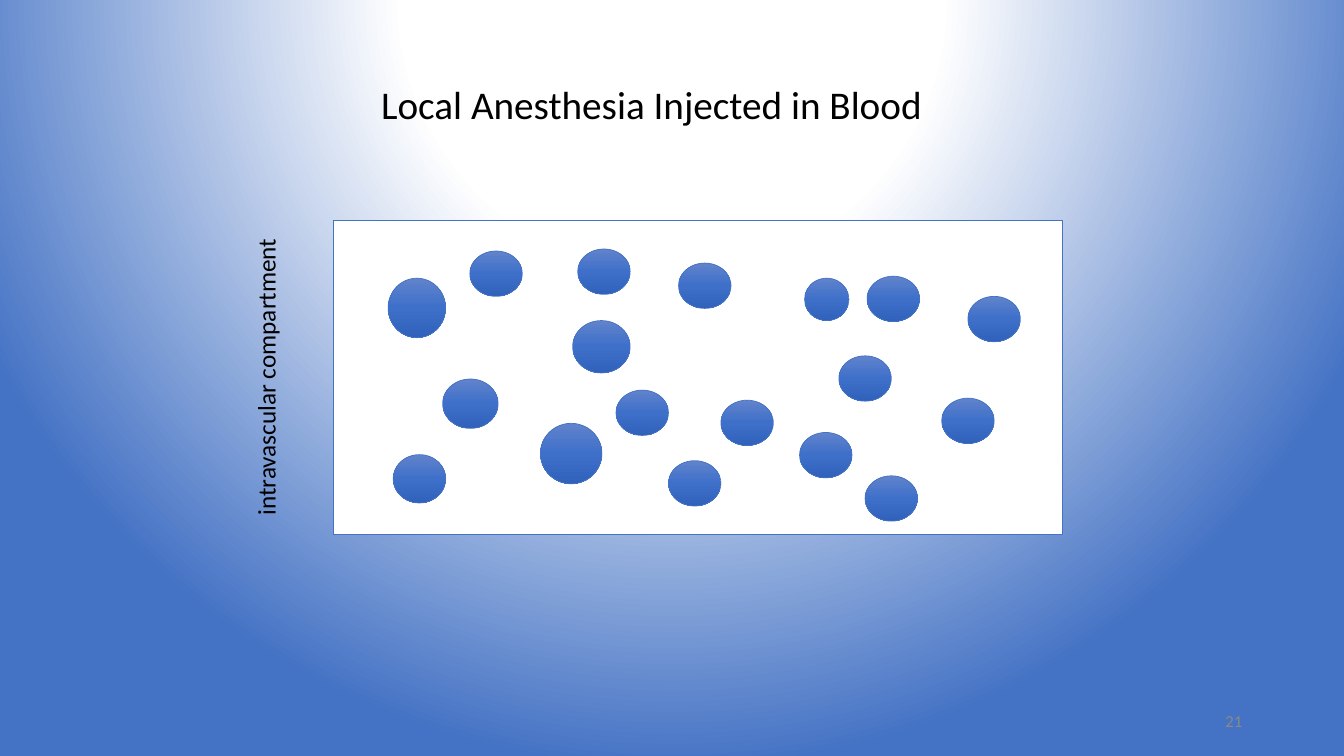
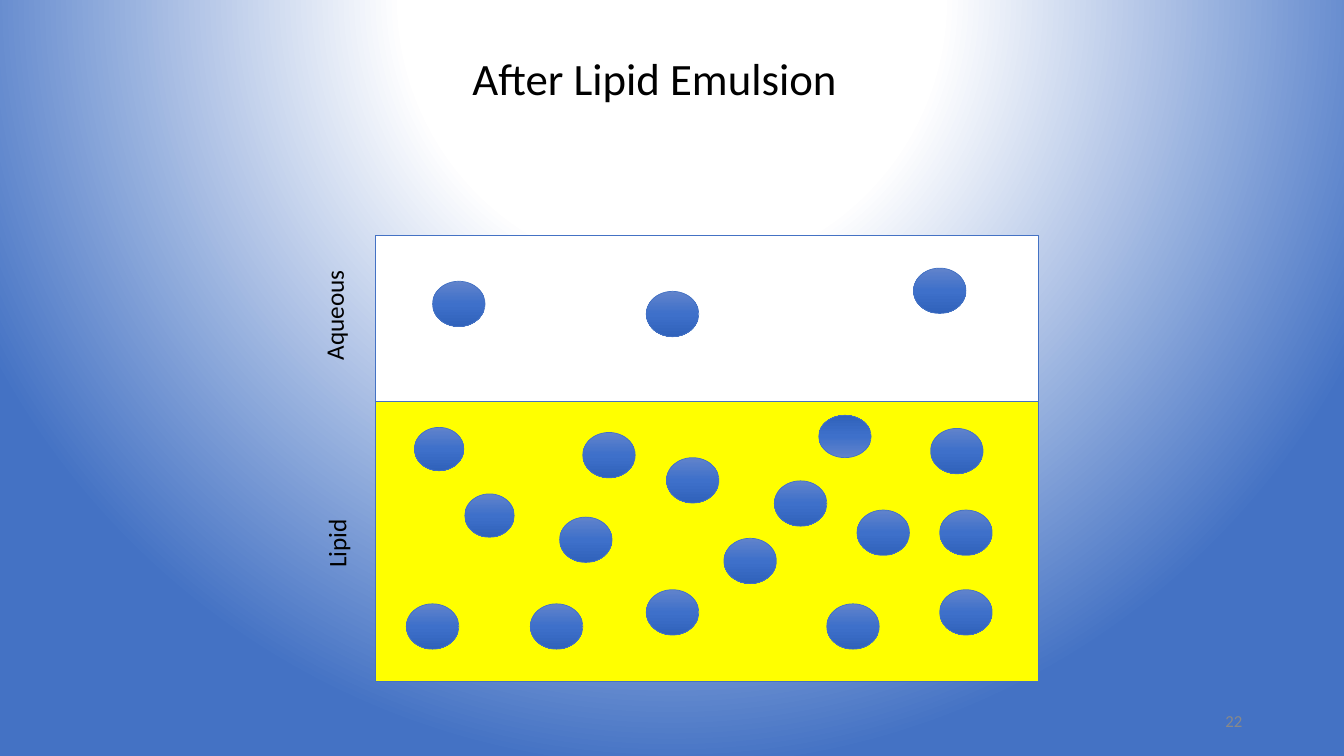
from dataclasses import dataclass

from pptx import Presentation
from pptx.dml.color import RGBColor
from pptx.enum.shapes import MSO_SHAPE
from pptx.enum.text import MSO_ANCHOR, PP_ALIGN
from pptx.oxml import parse_xml
from pptx.oxml.ns import nsdecls
from pptx.util import Inches, Pt


@dataclass(frozen=True)
class Theme:
    font: str = "Calibri"
    black: str = "000000"
    white: str = "FFFFFF"
    blue: str = "4472C4"
    yellow: str = "FFFF00"
    gray: str = "898989"
    glow: tuple = ((0, "FFFFFF"), (35, "FFFFFF"), (100, "4472C4"))
    bead: tuple = ((0, "6183CB"), (50, "3E70CA"), (100, "3062BB"))
    label: int = 18
    number: int = 12
    line: float = 0.5


THEME = Theme()
RADIAL = ('<a:path path="circle"><a:fillToRect l="50000" t="-80000" '
          'r="50000" b="180000"/></a:path>')
LINEAR = '<a:lin ang="5400000" scaled="0"/>'

BLOOD = [
    (3.85, 2.76, 0.57, 0.59), (5.36, 4.2, 0.61, 0.6), (7.98, 2.76, 0.44, 0.42),
    (5.68, 3.18, 0.57, 0.52), (4.39, 3.76, 0.55, 0.49), (3.9, 4.51, 0.52, 0.48),
    (4.66, 2.49), (7.93, 4.29), (6.63, 4.57), (6.11, 3.87), (8.58, 4.72),
    (7.15, 3.97), (6.73, 2.61), (9.34, 3.95), (8.6, 2.74), (9.6, 2.94),
    (8.32, 3.53), (5.73, 2.47),
]
WATER = [(4.29, 2.79), (6.41, 2.89), (9.06, 2.66)]
LIPID = [
    (4.11, 4.24, 0.49, 0.43), (4.61, 4.9, 0.49, 0.43), (8.5, 5.06),
    (5.55, 5.13), (6.61, 4.54), (4.03, 5.99), (9.32, 5.06), (7.68, 4.77),
    (5.26, 5.99), (8.12, 4.12, 0.52, 0.42, True), (7.18, 5.34), (9.23, 4.25),
    (9.32, 5.85), (5.78, 4.29), (6.41, 5.85), (8.2, 5.99),
]


def blend(fill, owner, stops, shade):
    fill.gradient()
    old = owner.xpath(".//a:gradFill")[0]
    marks = "".join(
        f'<a:gs pos="{pos * 1000}"><a:srgbClr val="{color}"/></a:gs>'
        for pos, color in stops)
    new = parse_xml(f'<a:gradFill {nsdecls("a")} rotWithShape="1">'
                    f'<a:gsLst>{marks}</a:gsLst>{shade}</a:gradFill>')
    old.getparent().replace(old, new)


def add_shape(slide, kind, *place):
    shape = slide.shapes.add_shape(kind, *map(Inches, place))
    shape.shadow.inherit = False
    shape.line.color.rgb = RGBColor.from_string(THEME.blue)
    shape.line.width = Pt(THEME.line)
    return shape


def add_panel(slide, color, *place):
    panel = add_shape(slide, MSO_SHAPE.RECTANGLE, *place)
    panel.fill.solid()
    panel.fill.fore_color.rgb = RGBColor.from_string(color)


def add_bead(slide, left, top, width=0.52, height=0.45, flip=False):
    bead = add_shape(slide, MSO_SHAPE.OVAL, left, top, width, height)
    blend(bead.fill, bead.element.spPr, THEME.bead, LINEAR)
    if flip:
        bead.element.spPr.xfrm.set("flipV", "1")


def add_text(slide, text, size, place, color=THEME.black,
             align=PP_ALIGN.CENTER, turn=0):
    box = slide.shapes.add_textbox(*map(Inches, place))
    box.rotation = turn
    frame = box.text_frame
    frame.word_wrap = False
    frame.vertical_anchor = MSO_ANCHOR.MIDDLE
    line = frame.paragraphs[0]
    line.text = text
    line.alignment = align
    line.font.name = THEME.font
    line.font.size = Pt(size)
    line.font.color.rgb = RGBColor.from_string(color)


def add_label(slide, text, *place):
    add_text(slide, text, THEME.label, place, turn=270)


def add_slide(deck, number, title, size, place):
    slide = deck.slides.add_slide(deck.slide_layouts[6])
    add_text(slide, title, size, place)
    add_text(slide, str(number), THEME.number, (9.42, 6.95, 3, 0.4),
             THEME.gray, PP_ALIGN.RIGHT)
    return slide


def main():
    deck = Presentation()
    deck.slide_width, deck.slide_height = Inches(13.33), Inches(7.5)
    master = deck.slide_master
    blend(master.background.fill, master.element, THEME.glow, RADIAL)

    before = add_slide(deck, 21, "Local Anesthesia Injected in Blood", 28,
                       (3.65, 0.75, 5.62, 0.57))
    add_panel(before, THEME.white, 3.31, 2.19, 7.23, 3.11)
    add_label(before, "intravascular compartment", 1.12, 3.54, 3.03, 0.4)
    for bead in BLOOD:
        add_bead(before, *bead)

    after = add_slide(deck, 22, "After Lipid Emulsion", 32,
                      (4.56, 0.45, 3.87, 0.64))
    add_panel(after, THEME.white, 3.72, 2.34, 6.58, 1.64)
    add_panel(after, THEME.yellow, 3.72, 3.98, 6.58, 2.78)
    add_label(after, "Aqueous", 2.73, 2.93, 1.16, 0.4)
    add_label(after, "Lipid", 2.99, 5.19, 0.69, 0.4)
    for bead in WATER + LIPID:
        add_bead(after, *bead)

    deck.save("out.pptx")


if __name__ == "__main__":
    main()
